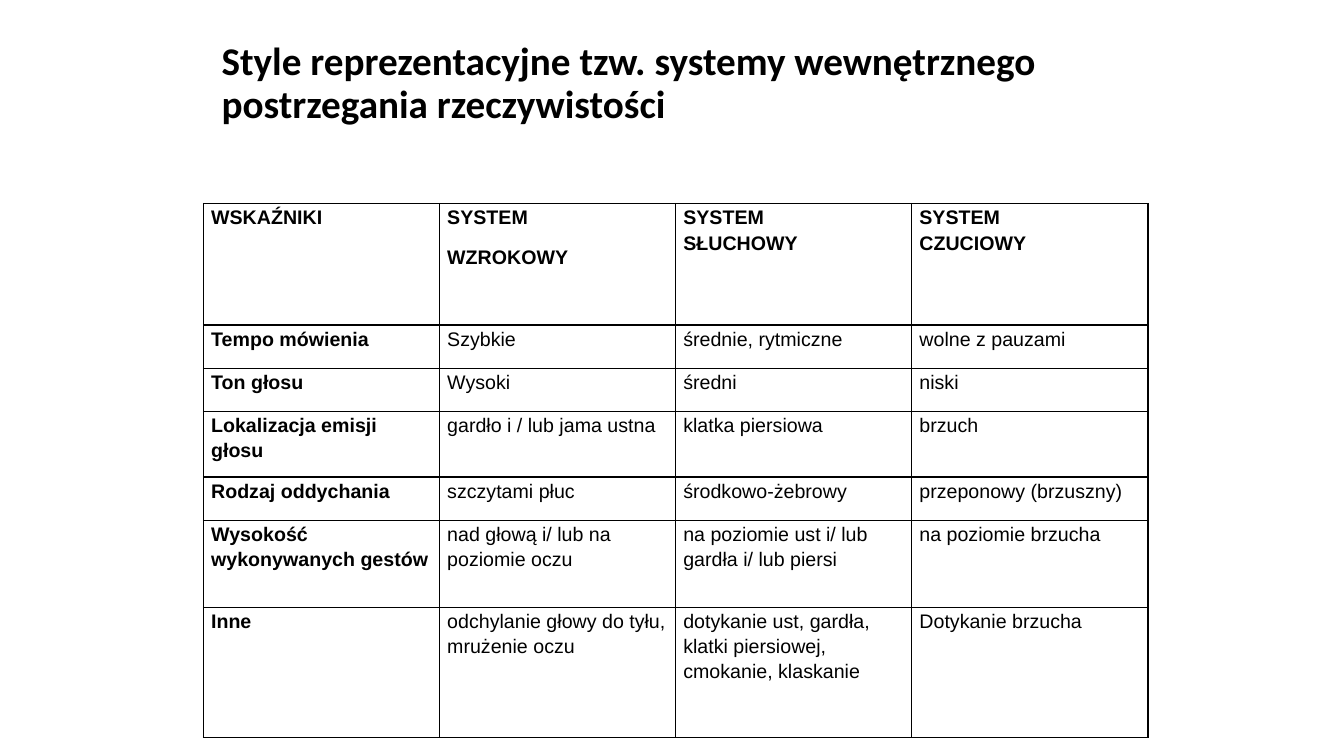
from lxml import etree
from pptx import Presentation
from pptx import util as u
from pptx.dml.color import RGBColor
from pptx.enum import text
from pptx.oxml.ns import qn

HEADINGS = [["WSKAŹNIKI"], ["SYSTEM", "WZROKOWY"], ["SYSTEM", "SŁUCHOWY"], ["SYSTEM", "CZUCIOWY"]]
INDICATORS = [
    ["Tempo mówienia", "Szybkie", "średnie, rytmiczne", "wolne z pauzami"],
    ["Ton głosu", "Wysoki", "średni", "niski"],
    ["Lokalizacja emisji głosu", "gardło i / lub jama ustna", "klatka piersiowa", "brzuch"],
    ["Rodzaj oddychania", "szczytami płuc", "środkowo-żebrowy", "przeponowy (brzuszny)"],
    ["Wysokość wykonywanych gestów", "nad głową i/ lub na poziomie oczu",
     "na poziomie ust i/ lub gardła i/ lub piersi", "na poziomie brzucha"],
    ["Inne", "odchylanie głowy do tyłu, mrużenie oczu",
     "dotykanie ust, gardła, klatki piersiowej, cmokanie, klaskanie", "Dotykanie brzucha"],
]
ROW_HEIGHTS = [3.06, 1.09, 1.09, 1.65, 1.09, 2.19, 3.28]
COLUMN_WIDTH = 5.95


def colour(value):
    return RGBColor.from_string(value)


def write(paragraph, wording, font="Arial", size=14, bold=False, ink="000000", spacing=1.15, after=10):
    paragraph.alignment = text.PP_ALIGN.LEFT
    paragraph.line_spacing = spacing
    paragraph.space_before = u.Pt(0)
    paragraph.space_after = u.Pt(after)
    run = paragraph.add_run()
    run.text = wording
    run.font.name = font
    run.font.size = u.Pt(size)
    run.font.bold = bold
    run.font.color.rgb = colour(ink)


class StylesSlide:
    line_ink = "000000"
    line_width = u.Pt(1)

    def __init__(self, deck):
        self.slide = deck.slides.add_slide(deck.slide_layouts[5])

    def title(self, wording, left, top, width, height):
        heading = self.slide.shapes.title
        heading.left, heading.top = u.Cm(left), u.Cm(top)
        heading.width, heading.height = u.Cm(width), u.Cm(height)
        frame = heading.text_frame
        frame.word_wrap = True
        frame.auto_size = text.MSO_AUTO_SIZE.NONE
        frame.vertical_anchor = text.MSO_ANCHOR.MIDDLE
        write(frame.paragraphs[0], wording, font="Calibri", size=28, bold=True, spacing=0.9, after=0)

    def table(self, headings, rows, left, top):
        grid = self.slide.shapes.add_table(
            len(ROW_HEIGHTS), len(headings), u.Cm(left), u.Cm(top),
            u.Cm(COLUMN_WIDTH * len(headings)), u.Cm(sum(ROW_HEIGHTS))).table
        grid.first_row = grid.horz_banding = False
        for column in grid.columns:
            column.width = u.Cm(COLUMN_WIDTH)
        for row, height in zip(grid.rows, ROW_HEIGHTS):
            row.height = u.Cm(height)
        for c, lines in enumerate(headings):
            # The last two headings set their lines close together
            self.cell(grid.cell(0, c), lines, bold=True, after=0 if c > 1 else 10)
        for r, row in enumerate(rows, start=1):
            for c, wording in enumerate(row):
                self.cell(grid.cell(r, c), [wording], bold=c == 0)

    def cell(self, cell, lines, **style):
        cell.margin_left = cell.margin_right = u.Cm(0.19)
        cell.margin_top = cell.margin_bottom = 0
        cell.fill.background()
        self.borders(cell)
        frame = cell.text_frame
        for i, line in enumerate(lines):
            write(frame.add_paragraph() if i else frame.paragraphs[0], line, **style)

    def borders(self, cell):
        properties = cell._tc.get_or_add_tcPr()
        for position, side in enumerate(("a:lnL", "a:lnR", "a:lnT", "a:lnB")):
            line = etree.Element(qn(side), w=str(self.line_width))
            fill = etree.SubElement(line, qn("a:solidFill"))
            etree.SubElement(fill, qn("a:srgbClr"), val=self.line_ink)
            properties.insert(position, line)


def main():
    deck = Presentation()
    deck.slide_width, deck.slide_height = u.Cm(33.87), u.Cm(19.05)
    page = StylesSlide(deck)
    page.title("Style reprezentacyjne tzw. systemy wewnętrznego postrzegania rzeczywistości",
               5.33, 0.53, 22.86, 3.18)
    page.table(HEADINGS, INDICATORS, 5.13, 5.13)
    deck.save("out.pptx")


if __name__ == "__main__":
    main()
